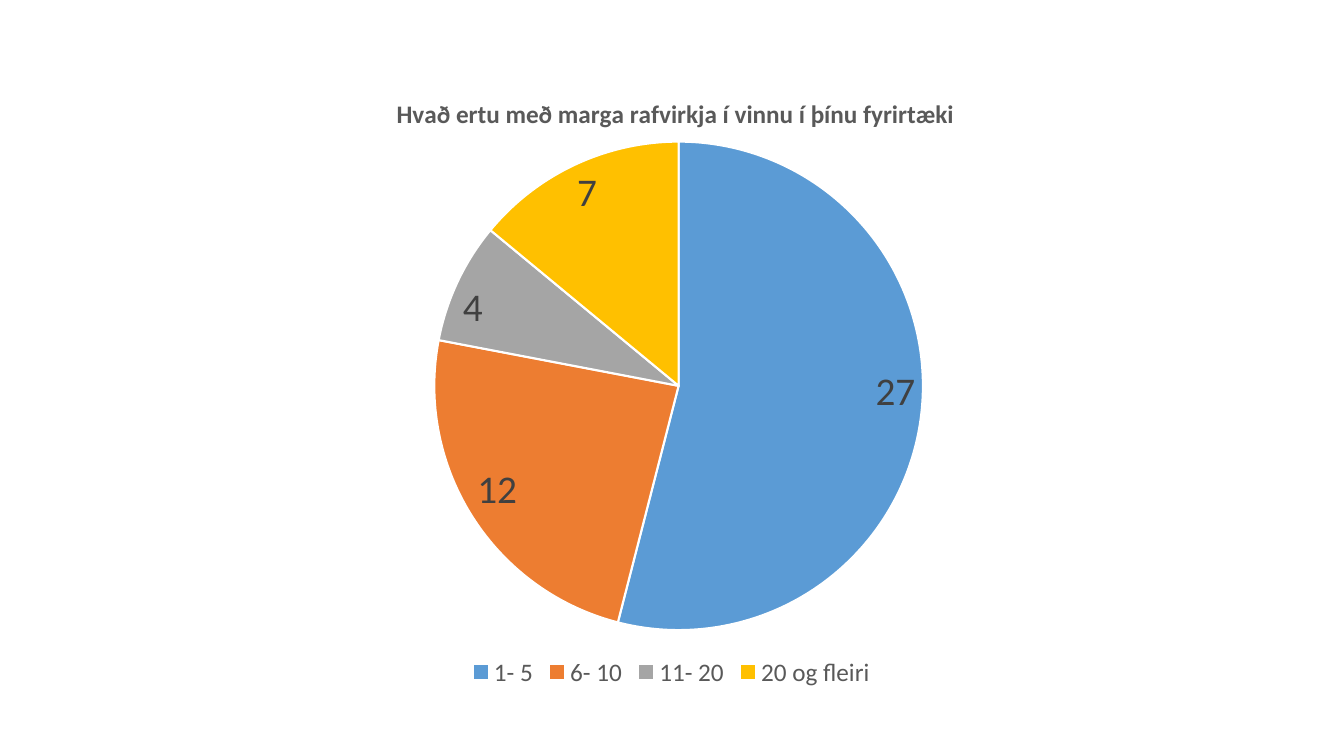
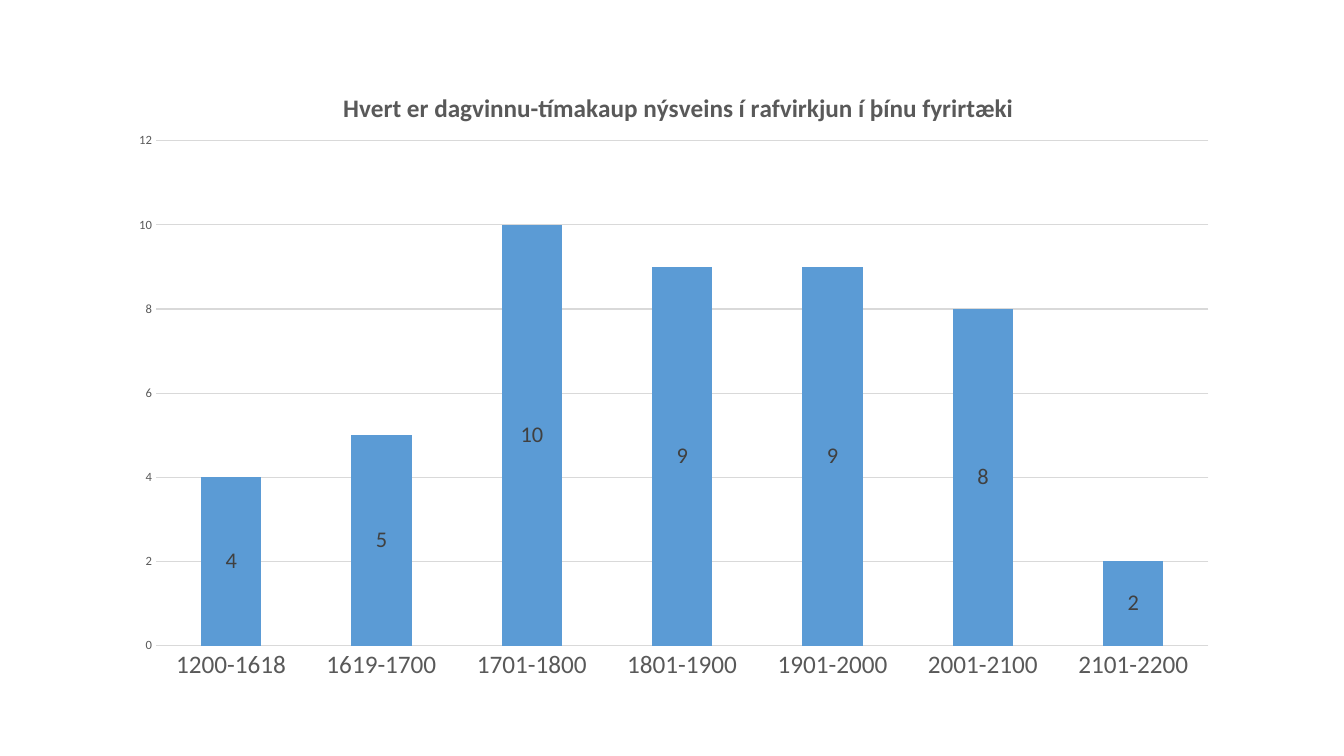
import pptx
import pptx.chart.data
import pptx.dml.color
import pptx.enum.chart
import pptx.oxml
import pptx.oxml.ns
import pptx.util

RGB = pptx.dml.color.RGBColor
BLUE = RGB(0x5B, 0x9B, 0xD5)
ORANGE = RGB(0xED, 0x7D, 0x31)
GREY = RGB(0xA5, 0xA5, 0xA5)
YELLOW = RGB(0xFF, 0xC0, 0x00)
WHITE = RGB(0xFF, 0xFF, 0xFF)
BLACK = RGB(0x00, 0x00, 0x00)
TEXT = RGB(0x59, 0x59, 0x59)
LABEL = RGB(0x40, 0x40, 0x40)
GRID = RGB(0xD9, 0xD9, 0xD9)

ChartType = pptx.enum.chart.XL_CHART_TYPE
LabelPosition = pptx.enum.chart.XL_LABEL_POSITION


class SurveyDeck:
    FONT = "Calibri"
    COLUMNS, ROWS = 160, 90
    HEADING_SIZE = 18

    def __init__(self):
        self.deck = pptx.Presentation()
        self.deck.slide_width = pptx.util.Inches(13.33)
        self.deck.slide_height = pptx.util.Inches(7.5)
        self.slide = None

    def new_slide(self):
        self.slide = self.deck.slides.add_slide(self.deck.slide_layouts[6])

    def style(self, font, size, color, bold=False):
        font.name = self.FONT
        font.size = pptx.util.Pt(size)
        font.bold = bold
        font.color.rgb = color

    def place(self, parent, index, percents, inner=False):
        for old in parent.findall(pptx.oxml.ns.qn("c:layout")):
            parent.remove(old)
        target = '<c:layoutTarget val="inner"/>' if inner else ""
        modes = '<c:xMode val="edge"/><c:yMode val="edge"/>'
        sizes = "".join(
            f'<c:{key} val="{percent / 100:.4f}"/>'
            for key, percent in zip("xywh", percents)
        )
        parent.insert(index, pptx.oxml.parse_xml(
            f'<c:layout {pptx.oxml.ns.nsdecls("c")}><c:manualLayout>'
            f"{target}{modes}{sizes}</c:manualLayout></c:layout>"
        ))

    def chart(self, kind, grid_box, question, question_at, plot_box, answers):
        data = pptx.chart.data.CategoryChartData()
        data.categories = list(answers)
        data.add_series("Series 1", list(answers.values()))
        cell_width = self.deck.slide_width / self.COLUMNS
        cell_height = self.deck.slide_height / self.ROWS
        left, top, width, height = grid_box
        chart = self.slide.shapes.add_chart(
            kind,
            int(left * cell_width), int(top * cell_height),
            int(width * cell_width), int(height * cell_height),
            data,
        ).chart
        self.style(chart.font, 10, BLACK)
        chart.has_legend = False
        chart.has_title = True
        heading = chart.chart_title.text_frame
        heading.text = question
        self.style(heading.paragraphs[0].runs[0].font, self.HEADING_SIZE, TEXT, True)
        self.place(chart.element.xpath("c:chart/c:title")[0], 1, question_at)
        self.place(chart.element.xpath("c:chart/c:plotArea")[0], 0, plot_box, True)
        return chart

    def value_labels(self, plot, size, position):
        plot.has_data_labels = True
        labels = plot.data_labels
        labels.show_value = True
        labels.show_percentage = False
        labels.position = position
        self.style(labels.font, size, LABEL)

    def pie(self, colors, **content):
        chart = self.chart(ChartType.PIE, **content)
        plot = chart.plots[0]
        plot.vary_by_categories = True
        for index, color in enumerate(colors):
            slice_format = plot.series[0].points[index].format
            slice_format.fill.solid()
            slice_format.fill.fore_color.rgb = color
            slice_format.line.color.rgb = WHITE
            slice_format.line.width = pptx.util.Pt(1.5)
        self.value_labels(plot, 28, LabelPosition.INSIDE_END)
        chart.has_legend = True
        chart.legend.position = pptx.enum.chart.XL_LEGEND_POSITION.BOTTOM
        chart.legend.include_in_layout = False
        self.style(chart.legend.font, 18, TEXT)

    def columns(self, color, top_value, step, **content):
        chart = self.chart(ChartType.COLUMN_STACKED, **content)
        plot = chart.plots[0]
        plot.vary_by_categories = False
        plot.gap_width = 150
        plot.overlap = 100
        bars = plot.series[0].format.fill
        bars.solid()
        bars.fore_color.rgb = color
        self.value_labels(plot, 16, LabelPosition.CENTER)
        for axis, size in ((chart.category_axis, 18), (chart.value_axis, 9)):
            axis.major_tick_mark = pptx.enum.chart.XL_TICK_MARK.NONE
            axis.minor_tick_mark = pptx.enum.chart.XL_TICK_MARK.NONE
            axis.format.line.fill.background()
            self.style(axis.tick_labels.font, size, TEXT)
        scale = chart.value_axis
        scale.minimum_scale, scale.maximum_scale = 0, top_value
        scale.major_unit = step
        scale.has_major_gridlines = True
        scale.major_gridlines.format.line.color.rgb = GRID
        scale.major_gridlines.format.line.width = pptx.util.Pt(0.75)

    def save(self):
        self.deck.save("out.pptx")


def main():
    survey = SurveyDeck()

    survey.new_slide()
    survey.pie(
        colors=(BLUE, ORANGE, GREY, YELLOW),
        grid_box=(13.68, 7.56, 132.5, 74.9),
        question="Hvað ertu með marga rafvirkja í vinnu í þínu fyrirtæki",
        question_at=(24.9, 4.5),
        plot_box=(28.7, 12.4, 43.9, 77.7),
        answers={"1- 5": 27, "6- 10": 12, "11- 20": 4, "20 og fleiri": 7},
    )

    survey.new_slide()
    survey.columns(
        color=BLUE,
        top_value=12,
        step=2,
        grid_box=(13.92, 6.84, 132.6, 75.7),
        question="Hvert er dagvinnu-tímakaup nýsveins í rafvirkjun í þínu fyrirtæki",
        question_at=(19.9, 4.5),
        plot_box=(3.5, 13.1, 94.5, 79.4),
        answers={
            "1200-1618": 4,
            "1619-1700": 5,
            "1701-1800": 10,
            "1801-1900": 9,
            "1901-2000": 9,
            "2001-2100": 8,
            "2101-2200": 2,
        },
    )

    survey.save()


if __name__ == "__main__":
    main()
